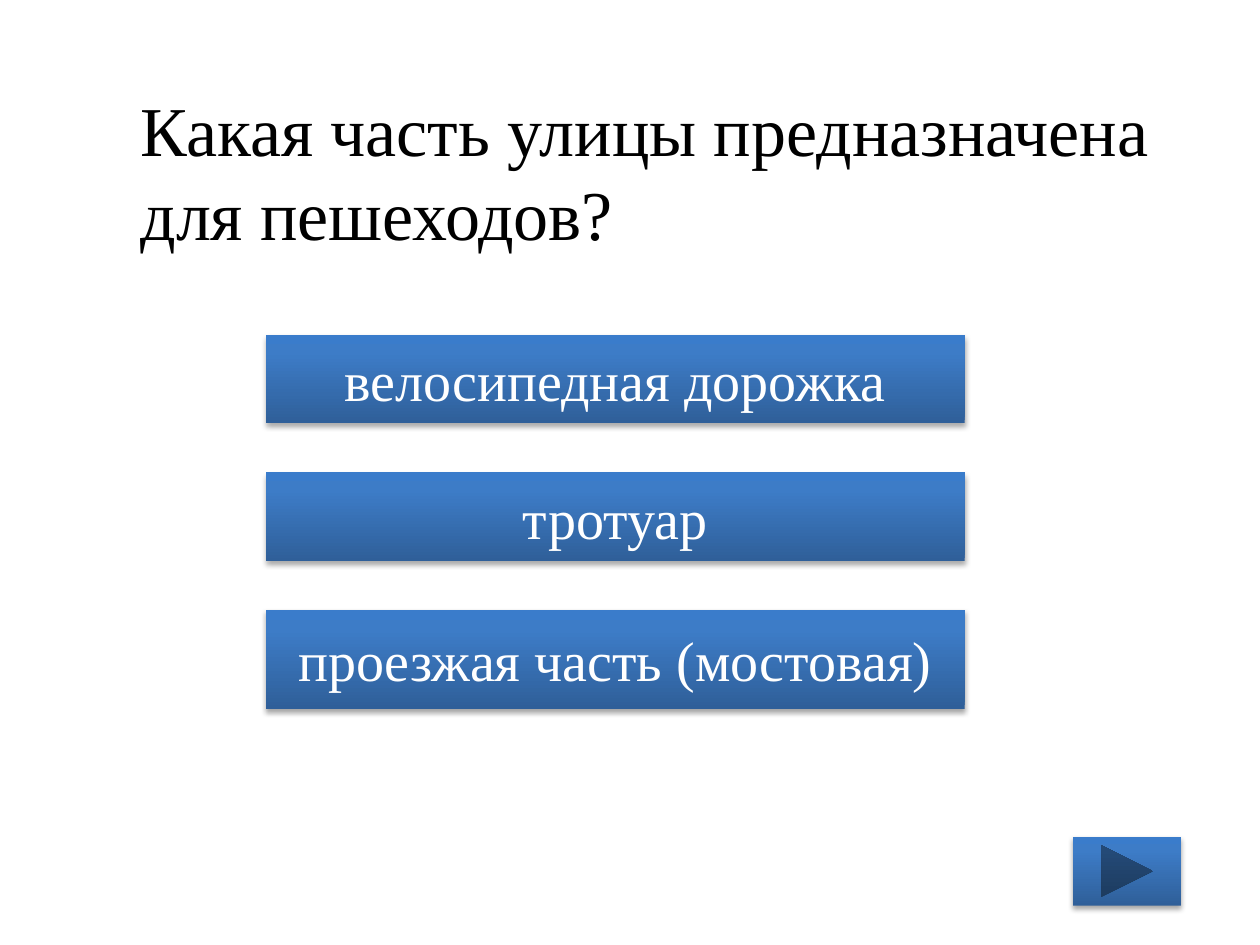
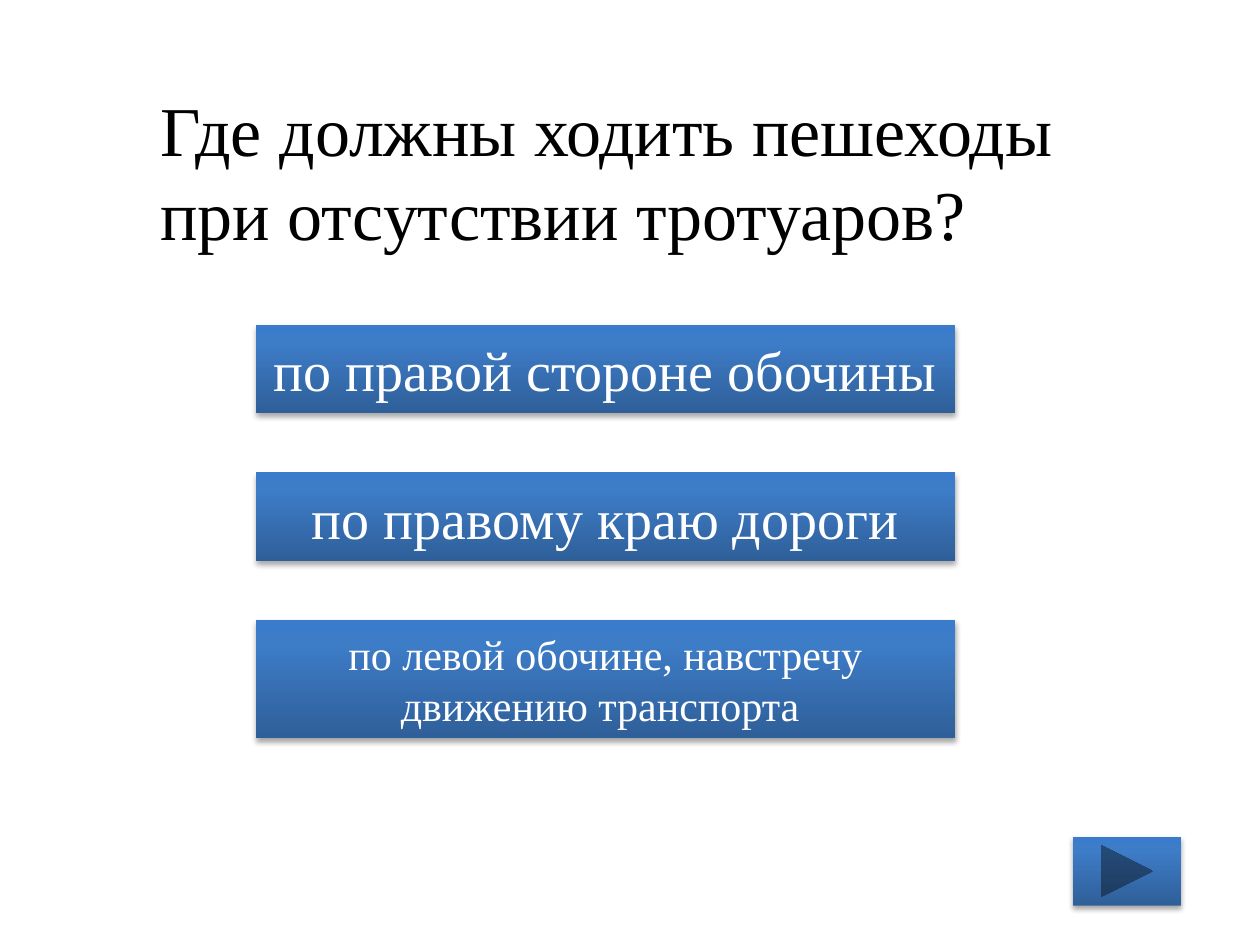
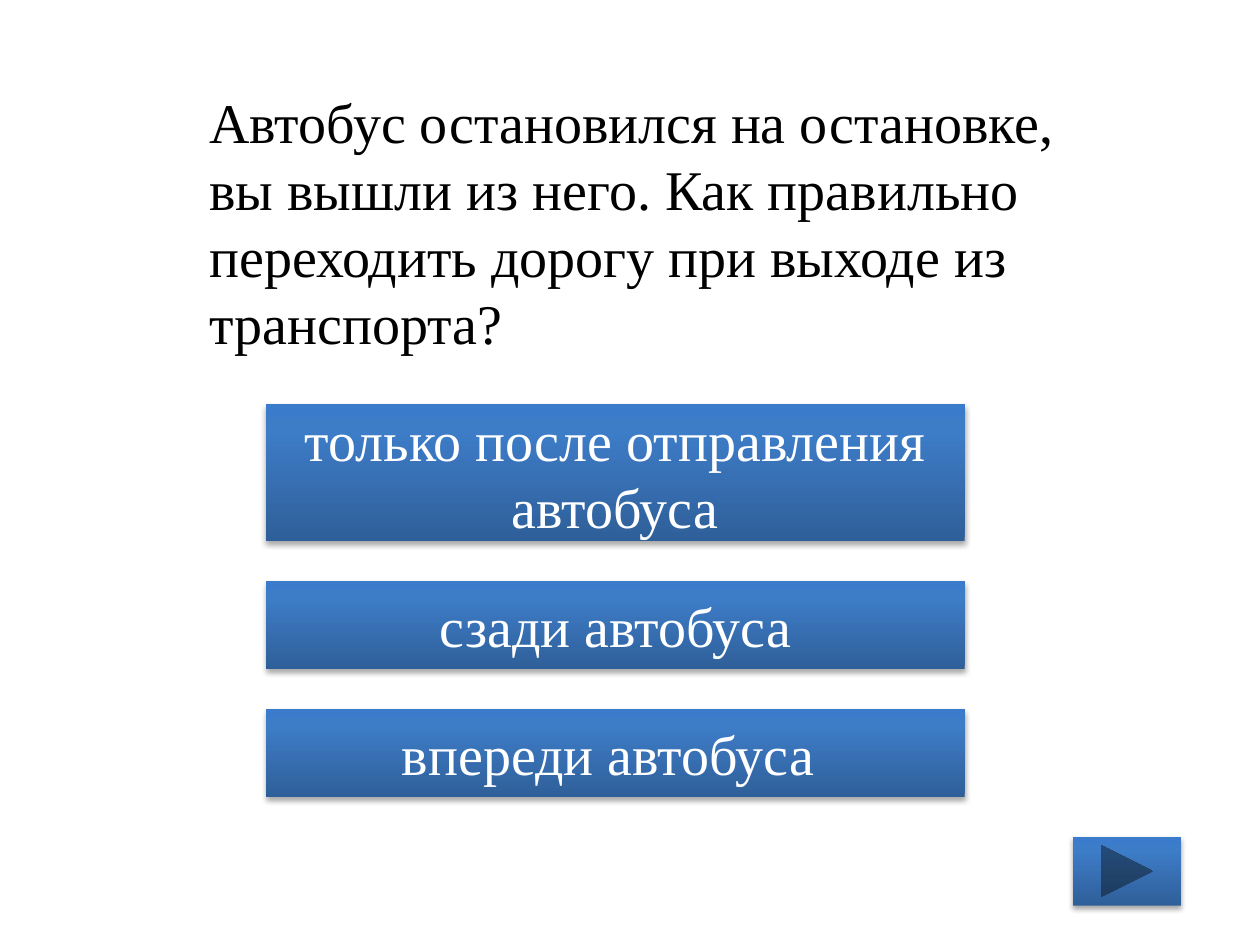
from pptx import Presentation
from pptx.dml.color import RGBColor
from pptx.enum.shapes import MSO_SHAPE as Shape
from pptx.enum.text import MSO_ANCHOR as Anchor, MSO_AUTO_SIZE as AutoSize, PP_ALIGN as Align
from pptx.oxml import parse_xml
from pptx.oxml.ns import nsdecls
from pptx.util import Inches, Pt

FONT = "Times New Roman"
COLORS = {
    "question": "000000",
    "answer": "FFFFFF",
    "bottom": "2F5F99",
    "middle": "3D7CC7",
    "top": "3A7CCB",
    "shadow": "000000",
}
STOPS = [(0, "bottom"), (80, "middle"), (100, "top")]
COLUMNS = 128
TITLE_TOP = 8
BUTTON_WIDTH = 71
NEXT_BUTTON = (109, 85, 11, 7)

QUIZ = [
    {
        "question": "Какая часть улицы предназначена для пешеходов?",
        "title": (13, 105, 18.6), "size": 40,
        "left": 27, "top": 34, "gap": 5,
        "answers": [
            ("велосипедная дорожка", 9, 32),
            ("тротуар", 9, 32),
            ("проезжая часть (мостовая)", 10, 32),
        ],
    },
    {
        "question": "Где должны ходить пешеходы при отсутствии тротуаров?",
        "title": (15, 99, 18.6), "size": 40,
        "left": 26, "top": 33, "gap": 6,
        "answers": [
            ("по правой стороне обочины", 9, 32),
            ("по правому краю дороги", 9, 32),
            ("по левой обочине, навстречу движению транспорта ", 12, 24),
        ],
    },
    {
        "question": "Автобус остановился на остановке, вы вышли из него. "
                    "Как правильно переходить дорогу при выходе из транспорта?",
        "title": (20, 91, 29), "size": 32,
        "left": 27, "top": 41, "gap": 4,
        "answers": [
            ("только после отправления автобуса", 14, 32),
            ("сзади автобуса", 9, 32),
            ("впереди автобуса ", 9, 32),
        ],
    },
]

deck = Presentation()
deck.slide_width, deck.slide_height = Inches(10), Inches(7.5)
cell = deck.slide_width / COLUMNS


def write(shape, text, size, color, align):
    frame = shape.text_frame
    frame.text = text
    frame.word_wrap = True
    frame.vertical_anchor = Anchor.MIDDLE
    para = frame.paragraphs[0]
    para.alignment = align
    para.font.name = FONT
    para.font.size = Pt(size)
    para.font.color.rgb = RGBColor.from_string(COLORS[color])


def add_button(page, kind, *place):
    button = page.shapes.add_shape(kind, *(round(cell * part) for part in place))
    properties = button._element.spPr
    stops = "".join(
        f'<a:gs pos="{share * 1000}"><a:srgbClr val="{COLORS[name]}"/></a:gs>'
        for share, name in STOPS)
    properties.append(parse_xml(
        f'<a:gradFill {nsdecls("a")} rotWithShape="1"><a:gsLst>{stops}</a:gsLst>'
        '<a:lin ang="16200000" scaled="0"/></a:gradFill>'))
    button.line.fill.background()
    button.shadow.inherit = False
    properties.effectLst.append(parse_xml(
        f'<a:outerShdw {nsdecls("a")} blurRad="{Pt(3.1)}" dist="{Pt(1.8)}" '
        'dir="5400000" rotWithShape="0">'
        f'<a:srgbClr val="{COLORS["shadow"]}"><a:alpha val="35000"/></a:srgbClr>'
        '</a:outerShdw>'))
    return button


for item in QUIZ:
    page = deck.slides.add_slide(deck.slide_layouts[5])
    title = page.shapes.title
    left, width, height = item["title"]
    title.left, title.top = round(cell * left), round(cell * TITLE_TOP)
    title.width, title.height = round(cell * width), round(cell * height)
    write(title, item["question"], item["size"], "question", Align.LEFT)
    title.text_frame.auto_size = AutoSize.SHAPE_TO_FIT_TEXT

    add_button(page, Shape.ACTION_BUTTON_FORWARD_OR_NEXT, *NEXT_BUTTON)

    top = item["top"]
    for text, height, size in item["answers"]:
        button = add_button(page, Shape.ACTION_BUTTON_CUSTOM,
                            item["left"], top, BUTTON_WIDTH, height)
        write(button, text, size, "answer", Align.CENTER)
        top += height + item["gap"]

deck.save("out.pptx")
